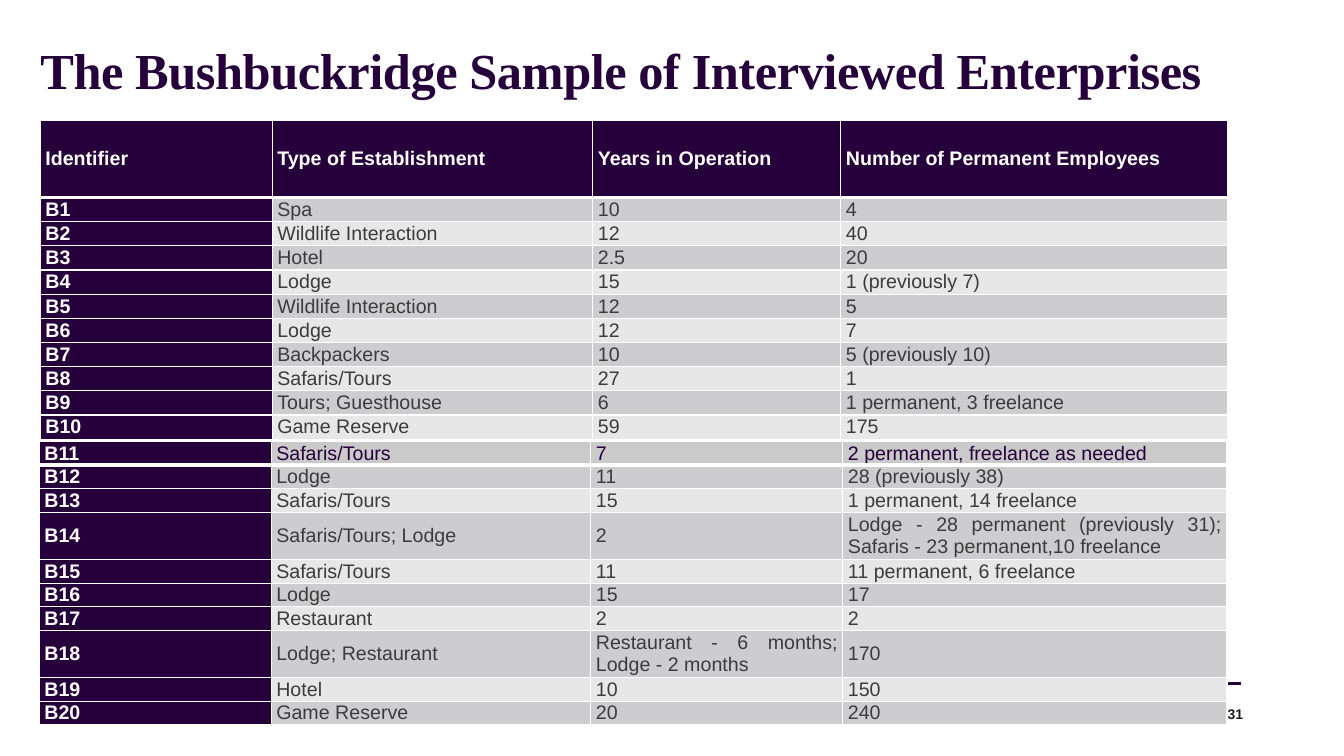
from lxml import etree
from pptx import Presentation
from pptx.dml.color import RGBColor
from pptx.enum import shapes, text
from pptx.oxml import ns
from pptx.util import Inches, Pt

PURPLE = RGBColor(0x26, 0x00, 0x3B)
WHITE = RGBColor(0xFF, 0xFF, 0xFF)
DARK_GREY = RGBColor(0x3C, 0x3C, 0x3C)
NEAR_BLACK = RGBColor(0x1E, 0x1E, 0x1E)
BAND_DARK = RGBColor(0xCD, 0xCC, 0xCE)
BAND_LIGHT = RGBColor(0xE8, 0xE7, 0xE8)
BAND_FIRST = RGBColor(0xCA, 0xCA, 0xCA)

UPPER_ROWS = [
    ("Identifier", "Type of Establishment", "Years in Operation",
     "Number of Permanent Employees"),
    ("B1", "Spa", "10", "4"),
    ("B2", "Wildlife Interaction", "12", "40"),
    ("B3", "Hotel", "2.5", "20"),
    ("B4", "Lodge", "15", "1 (previously 7)"),
    ("B5", "Wildlife Interaction", "12", "5"),
    ("B6", "Lodge", "12", "7"),
    ("B7", "Backpackers", "10", "5 (previously 10)"),
    ("B8", "Safaris/Tours", "27", "1"),
    ("B9", "Tours; Guesthouse", "6", "1 permanent, 3 freelance"),
    ("B10", "Game Reserve", "59", "175"),
]
LOWER_ROWS = [
    ("B11", "Safaris/Tours", "7", "2 permanent, freelance as needed"),
    ("B12", "Lodge", "11", "28 (previously 38)"),
    ("B13", "Safaris/Tours", "15", "1 permanent, 14 freelance"),
    ("B14", "Safaris/Tours; Lodge", "2",
     "Lodge - 28 permanent (previously 31); Safaris - 23 permanent,10 freelance"),
    ("B15", "Safaris/Tours", "11", "11 permanent, 6 freelance"),
    ("B16", "Lodge", "15", "17"),
    ("B17", "Restaurant", "2", "2"),
    ("B18", "Lodge; Restaurant", "Restaurant - 6 months; Lodge - 2 months", "170"),
    ("B19", "Hotel", "10", "150"),
    ("B20", "Game Reserve", "20", "240"),
]


def style_font(font, name, size, color, bold):
    font.name, font.size, font.bold = name, Pt(size), bold
    font.color.rgb = color


def clear_insets(frame):
    frame.margin_left = frame.margin_right = 0
    frame.margin_top = frame.margin_bottom = 0


def add_title(page, wording):
    title = page.shapes.title
    title.left, title.top = Inches(0.4), Inches(0.21)
    title.width, title.height = Inches(12.52), Inches(0.79)
    frame = title.text_frame
    frame.text = wording
    clear_insets(frame)
    frame.auto_size = text.MSO_AUTO_SIZE.NONE
    frame.vertical_anchor = text.MSO_ANCHOR.BOTTOM
    para = frame.paragraphs[0]
    para.alignment = text.PP_ALIGN.LEFT
    para.line_spacing = 0.9
    span = para.runs[0]
    style_font(span.font, "Times New Roman", 36, PURPLE, True)
    span.font._element.set("spc", "-30")


def add_footer(page, number):
    rule = page.shapes.add_connector(
        shapes.MSO_CONNECTOR.STRAIGHT,
        Inches(0.4), Inches(6.78), Inches(12.31), Inches(6.78))
    rule.line.color.rgb = PURPLE
    rule.line.width = Pt(2.25)
    etree.SubElement(rule._element.spPr, ns.qn("a:effectLst"))

    box = page.shapes.add_textbox(
        Inches(11.79), Inches(6.96), Inches(0.54), Inches(0.24))
    frame = box.text_frame
    frame.word_wrap = True
    frame.text = number
    clear_insets(frame)
    frame.vertical_anchor = text.MSO_ANCHOR.MIDDLE
    para = frame.paragraphs[0]
    para.alignment = text.PP_ALIGN.RIGHT
    style_font(para.runs[0].font, "Arial", 10, NEAR_BLACK, True)


def add_borders(cell, top, bottom):
    properties = cell._tc.get_or_add_tcPr()
    for side, width in (("L", 1), ("R", 1), ("T", top), ("B", bottom)):
        line = etree.SubElement(properties, ns.qn("a:ln" + side), w=str(Pt(width)))
        fill = etree.SubElement(line, ns.qn("a:solidFill"))
        etree.SubElement(fill, ns.qn("a:srgbClr"), val=str(WHITE))


def fill_cell(cell, wording, fill, color, bold):
    cell.fill.solid()
    cell.fill.fore_color.rgb = fill
    cell.margin_left = cell.margin_right = Inches(0.05)
    cell.margin_top = cell.margin_bottom = 0
    cell.vertical_anchor = text.MSO_ANCHOR.MIDDLE
    cell.text_frame.text = wording
    para = cell.text_frame.paragraphs[0]
    para.alignment = text.PP_ALIGN.JUSTIFY
    para.line_spacing = 1.0
    style_font(para.runs[0].font, "Arial", 14, color, bold)


def add_sample_table(page, left, top, widths, heights, rows, first_fill, first_color):
    frame = page.shapes.add_table(
        len(rows), len(widths), Inches(left), Inches(top),
        Inches(sum(widths)), Inches(sum(heights)))
    table = frame.table
    table.horz_banding = False
    for column, width in zip(table.columns, widths):
        column.width = Inches(width)
    for r, (row, height) in enumerate(zip(rows, heights)):
        table.rows[r].height = Inches(height)
        band = BAND_DARK if r % 2 else BAND_LIGHT
        for c, wording in enumerate(row):
            cell = table.cell(r, c)
            add_borders(cell, 3 if r == 1 else 1, 3 if r == 0 else 1)
            if c == 0:
                fill_cell(cell, wording, PURPLE, WHITE, True)
            elif r == 0:
                fill_cell(cell, wording, first_fill, first_color, first_color == WHITE)
            else:
                fill_cell(cell, wording, band, DARK_GREY, False)


def main():
    deck = Presentation()
    deck.slide_width, deck.slide_height = Inches(13.33), Inches(7.5)
    page = deck.slides.add_slide(deck.slide_layouts[5])

    # Footer lies behind the tables
    add_footer(page, "31")
    add_title(page, "The Bushbuckridge Sample of Interviewed Enterprises")

    # Enterprises B1 to B10, under the header row
    add_sample_table(page, 0.4, 1.19, [2.3, 3.18, 2.46, 3.84],
                     [0.77] + [0.24] * 10, UPPER_ROWS, PURPLE, WHITE)

    # Enterprises B11 to B20; two rows hold two lines
    heights = [0.47 if row[0] in ("B14", "B18") else 0.23 for row in LOWER_ROWS]
    add_sample_table(page, 0.39, 4.38, [2.3, 3.17, 2.5, 3.81],
                     heights, LOWER_ROWS, BAND_FIRST, PURPLE)

    deck.save("out.pptx")


if __name__ == "__main__":
    main()
